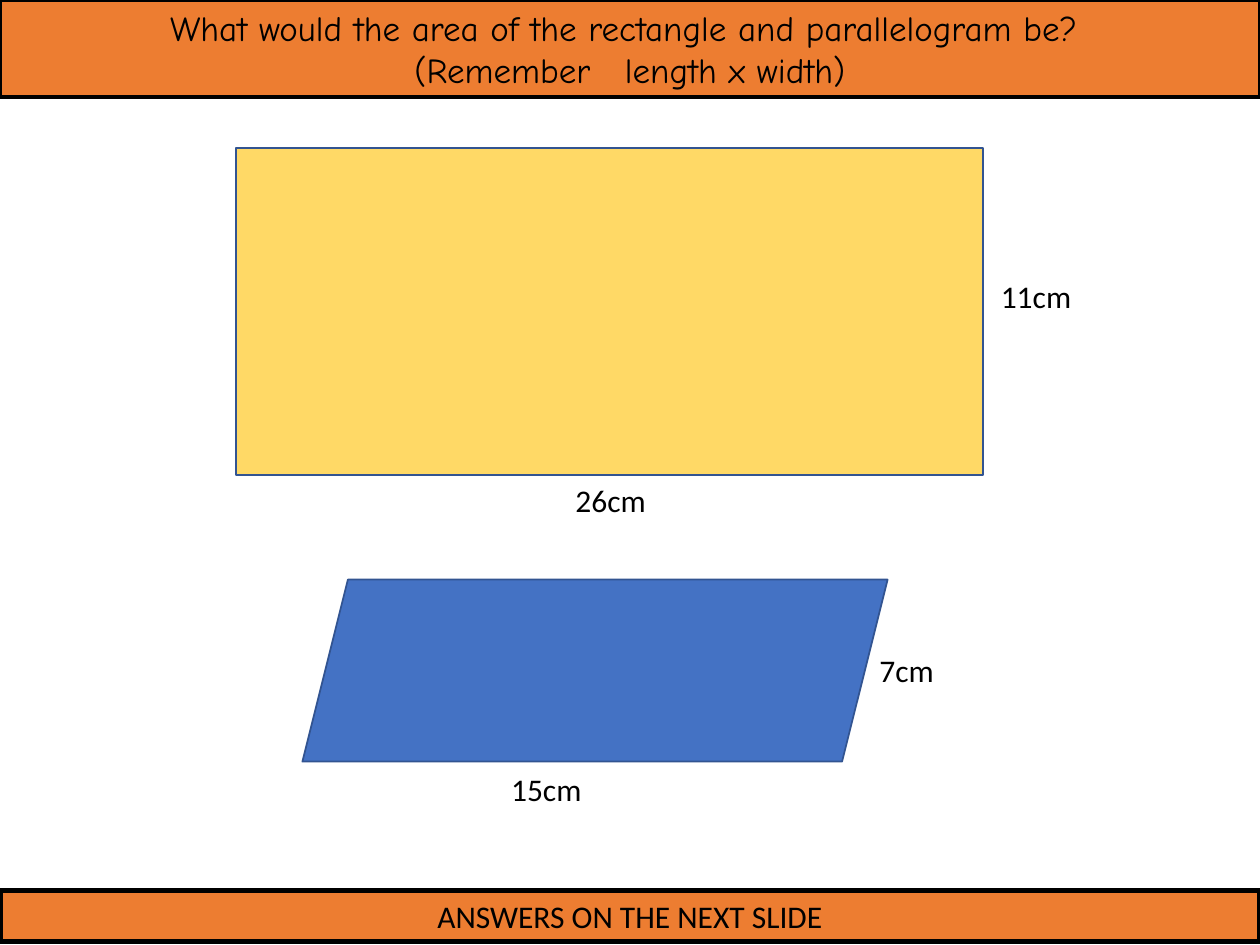
import pptx
import pptx.dml.color
import pptx.enum.shapes
import pptx.enum.text
import pptx.util

Pt = pptx.util.Pt
SHAPES = pptx.enum.shapes.MSO_SHAPE
BLACK = "000000"
ORANGE = "ED7D31"
OUTLINE = "325491"


def rgb(value):
    return pptx.dml.color.RGBColor.from_string(value)


def paint(sp, fill, line, width):
    sp.fill.solid()
    sp.fill.fore_color.rgb = rgb(fill)
    sp.line.color.rgb = rgb(line)
    sp.line.width = Pt(width)


def format_paragraph(p, size, font, align):
    p.alignment = align
    p.space_before = Pt(0)
    p.font.size = Pt(size)
    p.font.name = font
    p.font.color.rgb = rgb(BLACK)


def add_figure(slide, kind, box, fill, line=OUTLINE, width=1):
    sp = slide.shapes.add_shape(kind, *map(Pt, box))
    sp.shadow.inherit = False
    paint(sp, fill, line, width)
    return sp


def add_measure(slide, text, left, top, width):
    sp = slide.shapes.add_textbox(Pt(left), Pt(top), Pt(width), Pt(29))
    tf = sp.text_frame
    tf.word_wrap = True
    p = tf.paragraphs[0]
    p.text = text
    format_paragraph(p, 18, "Calibri", pptx.enum.text.PP_ALIGN.LEFT)


def add_question(slide):
    title = slide.shapes.title
    title.left, title.top, title.width, title.height = map(Pt, (0, 0, 720, 55.7))
    paint(title, ORANGE, BLACK, 2.25)
    tf = title.text_frame
    tf.auto_size = pptx.enum.text.MSO_AUTO_SIZE.NONE
    tf.vertical_anchor = pptx.enum.text.MSO_ANCHOR.MIDDLE
    tf.text = "What would the area of the rectangle and parallelogram be? "
    p = tf.add_paragraph()
    for text in ("(Remember", " ", "length x width)"):
        r = p.add_run()
        r.text = text
        if text == " ":
            # Character spacing widens the gap before the formula
            r.font._element.set("spc", "1300")
    for p in tf.paragraphs:
        format_paragraph(p, 20, "Comic Neue", pptx.enum.text.PP_ALIGN.CENTER)


def add_footer(slide):
    sp = add_figure(slide, SHAPES.RECTANGLE, (0, 509, 720, 29), ORANGE, BLACK, 3)
    tf = sp.text_frame
    tf.word_wrap = True
    p = tf.paragraphs[0]
    p.text = "ANSWERS ON THE NEXT SLIDE"
    format_paragraph(p, 18, "Calibri", pptx.enum.text.PP_ALIGN.CENTER)


def main():
    prs = pptx.Presentation()
    prs.slide_width, prs.slide_height = Pt(720), Pt(540)
    slide = prs.slides.add_slide(prs.slide_layouts[5])

    add_question(slide)
    add_figure(slide, SHAPES.RECTANGLE, (134.9, 84.4, 427, 187), "FFD966")
    add_measure(slide, "26cm", 321.8, 271.5, 155.5)
    add_measure(slide, "11cm", 564.8, 155, 155.2)
    add_figure(slide, SHAPES.PARALLELOGRAM, (172.8, 331.2, 334.4, 104), "4472C4")
    add_measure(slide, "15cm", 285, 436.6, 124)
    add_measure(slide, "7cm", 495.4, 368.6, 155.5)
    add_footer(slide)

    prs.save("out.pptx")


if __name__ == "__main__":
    main()
